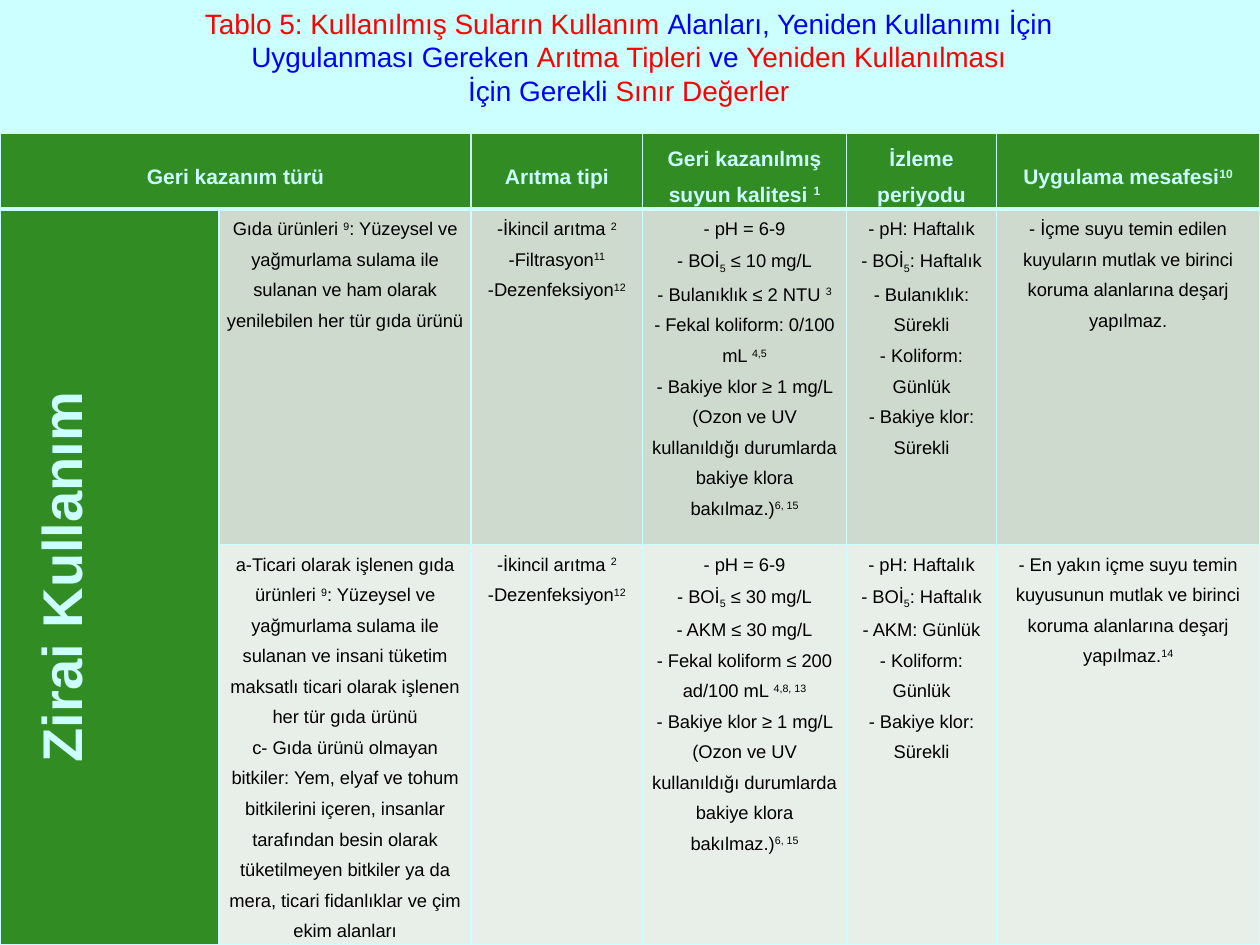
from lxml.etree import SubElement
from pptx import Presentation
from pptx.dml.color import RGBColor
from pptx.enum.text import MSO_ANCHOR, MSO_AUTO_SIZE, PP_ALIGN
from pptx.oxml.ns import qn
from pptx.util import Inches, Pt

AQUA = RGBColor(0xCC, 0xFF, 0xFF)
GREEN = RGBColor(0x31, 0x8C, 0x23)
SAGE = RGBColor(0xCE, 0xDA, 0xCD)
PALE = RGBColor(0xE8, 0xEE, 0xE8)
RED = RGBColor(0xFF, 0x00, 0x00)
BLUE = RGBColor(0x00, 0x00, 0xFF)
BLACK = RGBColor(0x00, 0x00, 0x00)
BASELINES = {"^": "30000", "_": "-25000"}

TITLE = [
    "*Tablo 5: Kullanılmış Suların Kullanım |Alanları, Yeniden Kullanımı İçin",
    "Uygulanması Gereken |*Arıtma Tipleri |ve |*Yeniden Kullanılması",
    "İçin Gerekli |*Sınır Değerler",
]
COLUMN_WIDTHS = [1.74, 2, 1.36, 1.62, 1.19, 2.09]
ROW_HEIGHTS = [0.6, 2.66, 3.18]
HEADERS = ["Geri kazanım türü", None, "Arıtma tipi", "Geri kazanılmış suyun kalitesi |^1",
           "İzleme periyodu", "Uygulama mesafesi|^10"]
GROUP = "Zirai Kullanım"
SECONDARY = "-İkincil arıtma |^2"
DISINFECTION = "-Dezenfeksiyon|^12"
PH = "- pH = 6-9"
CHLORINE = ("- Bakiye klor ≥ 1 mg/L (Ozon ve UV kullanıldığı durumlarda "
            "bakiye klora bakılmaz.)|^6, 15")
WEEKLY = ["- pH: Haftalık", "- BOİ|_5|: Haftalık"]
COMMON_PERIODS = ["- Koliform: Günlük", "- Bakiye klor: Sürekli"]
USES = [
    [
        ["Gıda ürünleri |^9|: Yüzeysel ve yağmurlama sulama ile sulanan ve ham olarak "
         "yenilebilen her tür gıda ürünü"],
        [SECONDARY, "-Filtrasyon|^11", DISINFECTION],
        [PH, "- BOİ|_5| ≤ 10 mg/L", "- Bulanıklık ≤ 2 NTU |^3",
         "- Fekal koliform: 0/100 mL |^4,5", CHLORINE],
        WEEKLY + ["- Bulanıklık: Sürekli"] + COMMON_PERIODS,
        ["- İçme suyu temin edilen kuyuların mutlak ve birinci koruma alanlarına "
         "deşarj yapılmaz."],
    ],
    [
        ["a-Ticari olarak işlenen gıda ürünleri |^9|: Yüzeysel ve yağmurlama sulama ile "
         "sulanan ve insani tüketim maksatlı ticari olarak işlenen her tür gıda ürünü",
         "c- Gıda ürünü olmayan bitkiler: Yem, elyaf ve tohum bitkilerini içeren, insanlar "
         "tarafından besin olarak tüketilmeyen bitkiler ya da mera, ticari fidanlıklar ve "
         "çim ekim alanları"],
        [SECONDARY, DISINFECTION],
        [PH, "- BOİ|_5| ≤ 30 mg/L", "- AKM ≤ 30 mg/L",
         "- Fekal koliform ≤ 200 ad/100 mL |^4,8, 13", CHLORINE],
        WEEKLY + ["- AKM: Günlük"] + COMMON_PERIODS,
        ["- En yakın içme suyu temin kuyusunun mutlak ve birinci koruma alanlarına "
         "deşarj yapılmaz.|^14"],
    ],
]


def write(tf, lines, size=10.5, color=BLACK, accent=RED, bold=False, spacing=1.5):
    for i, line in enumerate(lines):
        p = tf.paragraphs[0] if i == 0 else tf.add_paragraph()
        p.alignment = PP_ALIGN.CENTER
        p.line_spacing = spacing
        for piece in line.split("|"):
            mark = piece[0]
            r = p.add_run()
            r.text = piece.lstrip("*^_")
            r.font.name = "Arial"
            r.font.size = Pt(size)
            r.font.bold = bold
            r.font.color.rgb = accent if mark == "*" else color
            if mark in BASELINES:
                r.font._element.set("baseline", BASELINES[mark])


class SlideBuilder:
    def __init__(self, prs):
        self.s = prs.slides.add_slide(prs.slide_layouts[5])
        self.s.background.fill.solid()
        self.s.background.fill.fore_color.rgb = AQUA

    def title(self, lines, left, top, width, height):
        sp = self.s.shapes.title
        sp.left, sp.top = Inches(left), Inches(top)
        sp.width, sp.height = Inches(width), Inches(height)
        tf = sp.text_frame
        tf.word_wrap = True
        tf.auto_size = MSO_AUTO_SIZE.NONE
        tf.vertical_anchor = MSO_ANCHOR.TOP
        write(tf, lines, size=16, color=BLUE, spacing=1)

    def table(self, left, top, widths, heights):
        table = self.s.shapes.add_table(
            len(heights), len(widths), Inches(left), Inches(top),
            Inches(sum(widths)), Inches(sum(heights))).table
        for column, width in zip(table.columns, widths):
            column.width = Inches(width)
        for row, height in zip(table.rows, heights):
            row.height = Inches(height)
        return table

    def borders(self, cell, **widths):
        tc_pr = cell._tc.get_or_add_tcPr()
        for side in "LRTB":
            ln = SubElement(tc_pr, qn(f"a:ln{side}"), w=str(Pt(widths.get(side, 1))))
            fill = SubElement(ln, qn("a:solidFill"))
            SubElement(fill, qn("a:srgbClr"), val=str(AQUA))

    def cell(self, cell, lines, fill, anchor=MSO_ANCHOR.TOP, edges=None, **fmt):
        self.borders(cell, **(edges or {}))
        cell.fill.solid()
        cell.fill.fore_color.rgb = fill
        cell.margin_left = cell.margin_right = Inches(0.04)
        cell.margin_top = cell.margin_bottom = 0
        cell.vertical_anchor = anchor
        write(cell.text_frame, lines, **fmt)


def main():
    prs = Presentation()
    prs.slide_width, prs.slide_height = Inches(10), Inches(7.5)
    builder = SlideBuilder(prs)
    builder.title(TITLE, 0.32, 0, 9.34, 0.94)
    table = builder.table(0, 1.06, COLUMN_WIDTHS, ROW_HEIGHTS)
    table.cell(0, 0).merge(table.cell(0, 1))
    table.cell(1, 0).merge(table.cell(2, 0))

    for col, header in enumerate(HEADERS):
        builder.cell(table.cell(0, col), [header] if header else [], GREEN,
                     MSO_ANCHOR.MIDDLE, {"B": 3}, size=12, color=AQUA, bold=True)
    for row, (use, fill) in enumerate(zip(USES, (SAGE, PALE)), start=1):
        edges = {"T": 3} if row == 1 else {}
        group = table.cell(row, 0)
        builder.cell(group, [GROUP] if row == 1 else [], GREEN, edges=edges,
                     size=32, color=AQUA, bold=True)
        group._tc.get_or_add_tcPr().set("vert", "vert270")
        for col, lines in enumerate(use, start=1):
            builder.cell(table.cell(row, col), lines, fill, edges=edges)
    prs.save("out.pptx")


if __name__ == "__main__":
    main()
